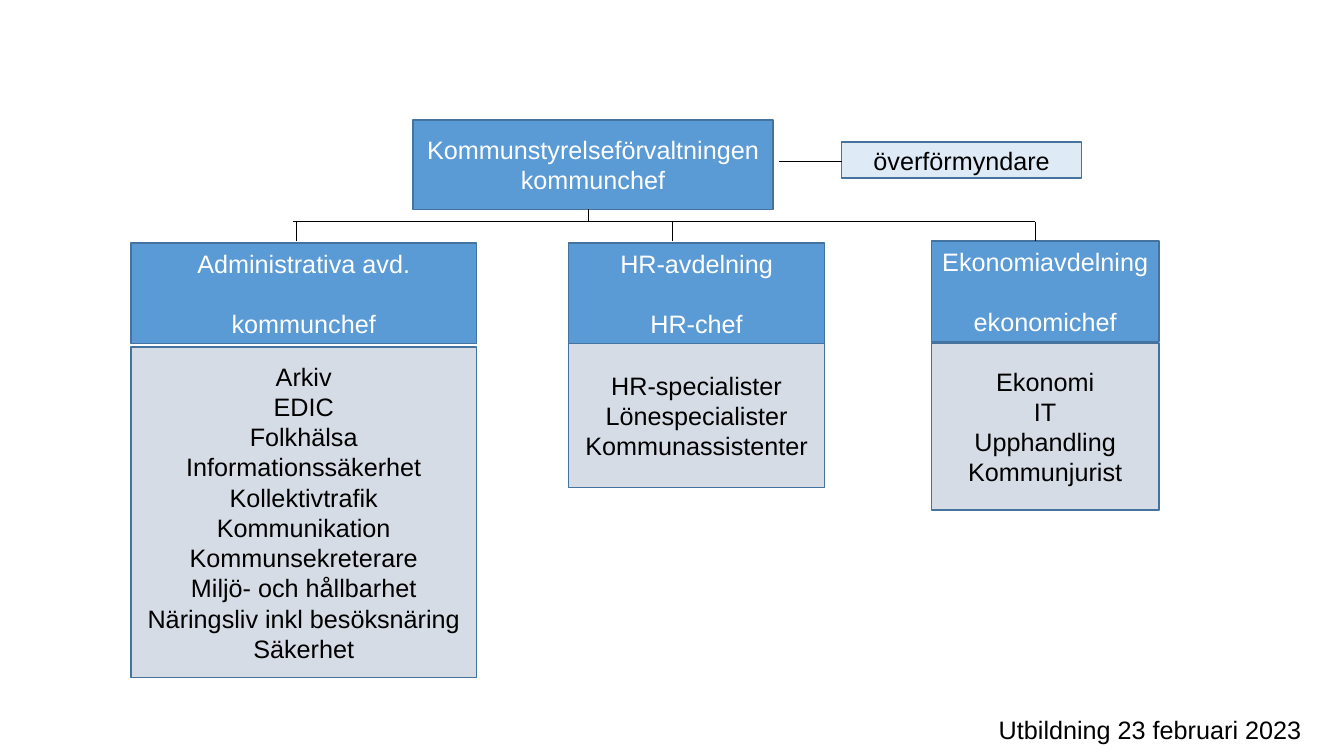
from pptx import Presentation
from pptx.dml.color import RGBColor
from pptx.enum.shapes import MSO_CONNECTOR, MSO_SHAPE
from pptx.enum.text import MSO_ANCHOR, PP_ALIGN
from pptx.oxml.ns import qn
from pptx.util import Cm, Pt
from lxml import etree

RECTANGLE = MSO_SHAPE.RECTANGLE
STRAIGHT = MSO_CONNECTOR.STRAIGHT
MIDDLE = MSO_ANCHOR.MIDDLE
CENTER = PP_ALIGN.CENTER
LEFT = PP_ALIGN.LEFT

BLUE = "5B9BD5"
PALE_BLUE = "DEEBF7"
GREY = "D6DCE5"
OUTLINE = "43739E"
BLACK = "000000"
WHITE = "FFFFFF"

HEADER_HEIGHT = 2.54
LINE_GAP = 21.6
BRANCH_TOP = 5.59
BRANCH_BOTTOM = 6.07

DEPARTMENTS = [
    ((3.3, 6.12, 8.71, 10.95), 0.08,
     ["Administrativa avd.", "kommunchef"],
     ["Arkiv", "EDIC", "Folkhälsa", "Informationssäkerhet", "Kollektivtrafik",
      "Kommunikation", "Kommunsekreterare", "Miljö- och hållbarhet",
      "Näringsliv inkl besöksnäring", "Säkerhet"]),
    ((14.33, 6.12, 6.45, 6.17), 0,
     ["HR-avdelning", "HR-chef"],
     ["HR-specialister", "Lönespecialister", "Kommunassistenter"]),
    ((23.47, 6.07, 5.74, 6.78), 0.03,
     ["Ekonomiavdelning", "ekonomichef"],
     ["Ekonomi", "IT", "Upphandling", "Kommunjurist"]),
]


def color(value):
    return RGBColor.from_string(value)


def write(shape, lines, ink, align=CENTER, gap=0):
    frame = shape.text_frame
    frame.word_wrap = True
    frame.vertical_anchor = MIDDLE
    for index, line in enumerate(lines):
        para = frame.add_paragraph() if index else frame.paragraphs[0]
        para.text = line
        para.alignment = align
        para.space_before = Pt(gap if index else 0)
        para.font.name = "Arial"
        para.font.size = Pt(18)
        para.font.color.rgb = color(ink)


def add_box(page, box, lines, fill, ink, gap=0):
    shape = page.shapes.add_shape(RECTANGLE, *map(Cm, box))
    shape.shadow.inherit = False
    shape.fill.solid()
    shape.fill.fore_color.rgb = color(fill)
    shape.line.color.rgb = color(OUTLINE)
    shape.line.width = Pt(1)
    write(shape, lines, ink, gap=gap)


def add_line(page, *ends):
    line = page.shapes.add_connector(STRAIGHT, *map(Cm, ends))
    line.line.color.rgb = color(BLACK)
    line.line.width = Pt(0.5)
    properties = line._element.find(qn("p:spPr"))
    etree.SubElement(properties, qn("a:effectLst"))


def add_management(page, box):
    left, top, width, height = box
    add_box(page, box, ["Kommunstyrelseförvaltningen", "kommunchef"], BLUE, WHITE)
    side_left = left + width + 1.73
    side_top = top + 0.56
    add_box(page, (side_left, side_top, 6.05, 0.91), ["överförmyndare"], PALE_BLUE, BLACK)
    add_line(page, side_left - 1.57, side_top + 0.48, side_left, side_top + 0.48)
    stem = left + 4.42
    add_line(page, stem, top + height, stem, BRANCH_TOP)


def add_branches(page, drops):
    add_line(page, drops[0] - 0.08, BRANCH_TOP, drops[-1], BRANCH_TOP)
    for drop in drops:
        add_line(page, drop, BRANCH_TOP, drop, BRANCH_BOTTOM)


def add_department(page, box, gap, heading, duties):
    left, top, width, height = box
    offset = HEADER_HEIGHT + gap
    add_box(page, (left, top, width, HEADER_HEIGHT), heading, BLUE, WHITE, LINE_GAP)
    add_box(page, (left, top + offset, width, height - offset), duties, GREY, BLACK)


def add_footer(page, box):
    write(page.shapes.add_textbox(*map(Cm, box)), ["Utbildning 23 februari 2023"], BLACK, LEFT)


def main():
    deck = Presentation()
    deck.slide_width = Cm(33.87)
    deck.slide_height = Cm(19.05)
    page = deck.slides.add_slide(deck.slide_layouts[6])
    add_management(page, (10.41, 3.02, 9.07, 2.26))
    for department in DEPARTMENTS:
        add_department(page, *department)
    add_branches(page, [7.47, 16.94, 26.09])
    add_footer(page, (24.92, 17.86, 8.71, 1.02))
    deck.save("out.pptx")


if __name__ == "__main__":
    main()
